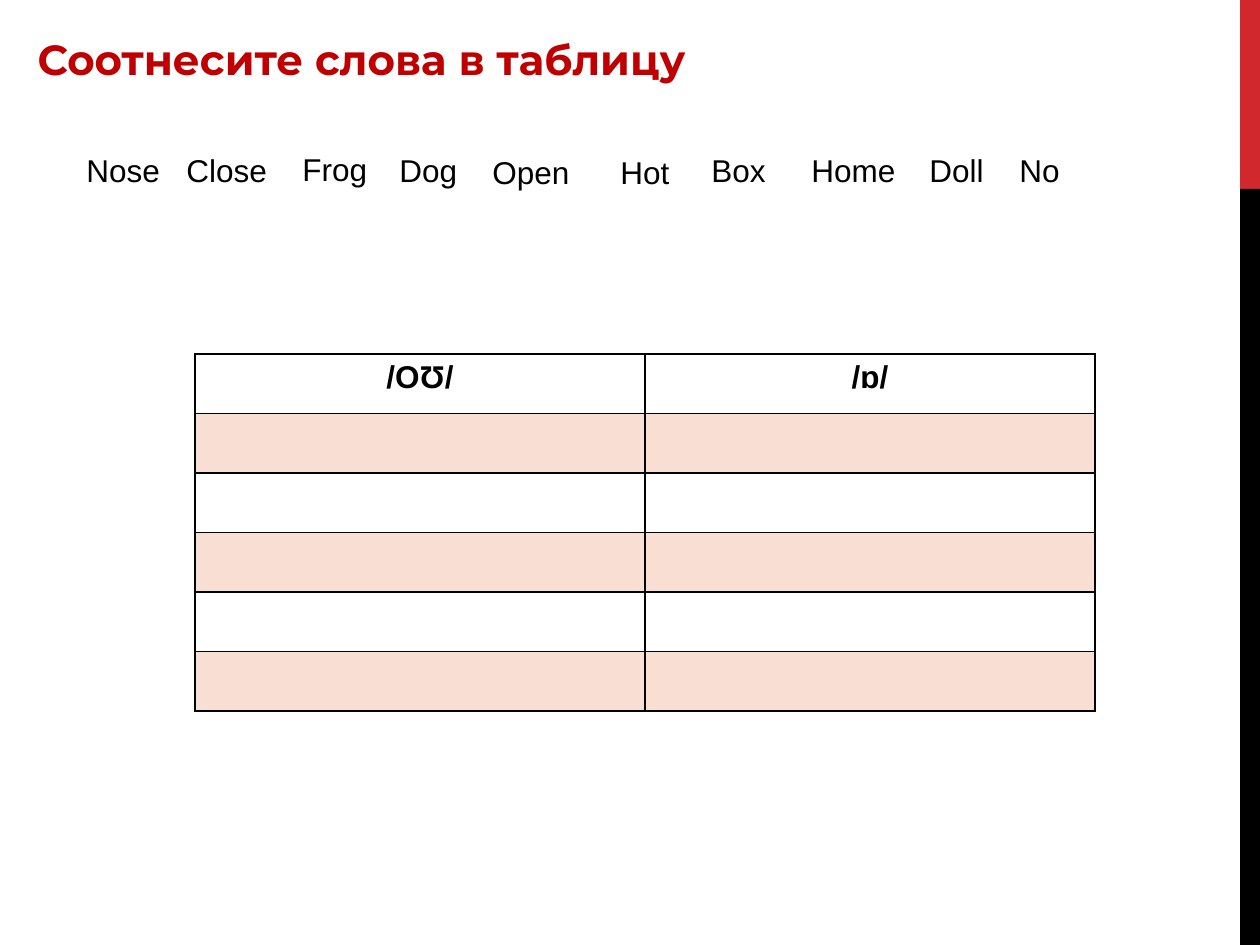
from dataclasses import dataclass

from lxml.etree import SubElement
from pptx import Presentation
from pptx.dml.color import RGBColor
from pptx.enum.shapes import MSO_SHAPE
from pptx.enum.text import MSO_ANCHOR, MSO_AUTO_SIZE, PP_ALIGN
from pptx.oxml.ns import qn
from pptx.slide import Slide
from pptx.table import _Cell
from pptx.util import Emu, Pt

PX_PER_INCH = 126


def px(length: int) -> Emu:
    return Emu(round(length * 914400 / PX_PER_INCH))


@dataclass(frozen=True)
class Theme:
    heading: str = "C00000"
    ink: str = "000000"
    accent: str = "D1282E"
    band: str = "F8DED3"
    heading_font: str = "Montserrat"
    body_font: str = "Arial"
    heading_size: int = 24
    body_size: int = 18
    border_width: int = 1


@dataclass(frozen=True)
class Box:
    left: int
    top: int
    width: int
    height: int

    def emu(self) -> tuple[Emu, ...]:
        return px(self.left), px(self.top), px(self.width), px(self.height)


@dataclass(frozen=True)
class Word:
    text: str
    left: int
    width: int
    top: int = 145


@dataclass(frozen=True)
class Stripe:
    box: Box
    color: str


THEME = Theme()
SLIDE_WIDTH, SLIDE_HEIGHT = 1260, 945
WORD_HEIGHT = 50
HEADING = "Соотнесите слова в таблицу"
HEADING_BOX = Box(25, 27, 707, 64)
STRIPES = [
    Stripe(Box(1240, 0, 20, 189), THEME.accent),
    Stripe(Box(1240, 189, 20, 756), THEME.ink),
]
WORDS = [
    Word("Nose", 74, 100),
    Word("Close", 174, 118),
    Word("Frog", 290, 169, 144),
    Word("Dog", 387, 89),
    Word("Open", 480, 118, 147),
    Word("Hot", 608, 118, 147),
    Word("Box", 699, 100),
    Word("Home", 799, 118),
    Word("Doll", 917, 110),
    Word("No", 1007, 159),
]
SOUNDS = ["/OƱ/", "/ɒ/"]
ANSWER_ROWS = 5
TABLE_BOX = Box(195, 354, 900, 357)


def format_runs(frame, font: str, size: int, color: str, bold: bool = False) -> None:
    for paragraph in frame.paragraphs:
        for run in paragraph.runs:
            run.font.name = font
            run.font.size = Pt(size)
            run.font.bold = bold
            run.font.color.rgb = RGBColor.from_string(color)


def draw_stripe(slide: Slide, stripe: Stripe) -> None:
    bar = slide.shapes.add_shape(MSO_SHAPE.RECTANGLE, *stripe.box.emu())
    bar.shadow.inherit = False
    bar.fill.solid()
    bar.fill.fore_color.rgb = RGBColor.from_string(stripe.color)
    bar.line.fill.background()


def draw_heading(slide: Slide) -> None:
    heading = slide.shapes.title
    heading.left, heading.top, heading.width, heading.height = HEADING_BOX.emu()
    frame = heading.text_frame
    frame.text = HEADING
    frame.word_wrap = False
    frame.auto_size = MSO_AUTO_SIZE.SHAPE_TO_FIT_TEXT
    frame.vertical_anchor = MSO_ANCHOR.TOP
    frame.paragraphs[0].alignment = PP_ALIGN.LEFT
    format_runs(frame, THEME.heading_font, THEME.heading_size, THEME.heading, True)


def draw_word(slide: Slide, word: Word) -> None:
    box = Box(word.left, word.top, word.width, WORD_HEIGHT)
    frame = slide.shapes.add_textbox(*box.emu()).text_frame
    frame.text = word.text
    frame.word_wrap = True
    frame.auto_size = MSO_AUTO_SIZE.SHAPE_TO_FIT_TEXT
    format_runs(frame, THEME.body_font, THEME.body_size, THEME.ink)


def set_borders(cell: _Cell) -> None:
    properties = cell._tc.get_or_add_tcPr()
    for side in ("a:lnL", "a:lnR", "a:lnT", "a:lnB"):
        border = SubElement(properties, qn(side), w=str(Pt(THEME.border_width)))
        SubElement(SubElement(border, qn("a:solidFill")), qn("a:srgbClr"), val=THEME.ink)


def draw_sound_table(slide: Slide) -> None:
    table = slide.shapes.add_table(ANSWER_ROWS + 1, len(SOUNDS), *TABLE_BOX.emu()).table
    table.first_row = False
    table.horz_banding = False
    for index, row in enumerate(table.rows):
        for cell in row.cells:
            set_borders(cell)
            if index % 2:
                cell.fill.solid()
                cell.fill.fore_color.rgb = RGBColor.from_string(THEME.band)
            else:
                cell.fill.background()
    for column, sound in enumerate(SOUNDS):
        frame = table.cell(0, column).text_frame
        frame.text = sound
        frame.paragraphs[0].alignment = PP_ALIGN.CENTER
        format_runs(frame, THEME.body_font, THEME.body_size, THEME.ink, True)


def main() -> None:
    presentation = Presentation()
    presentation.slide_width = px(SLIDE_WIDTH)
    presentation.slide_height = px(SLIDE_HEIGHT)
    slide = presentation.slides.add_slide(presentation.slide_layouts.get_by_name("Title Only"))
    for stripe in STRIPES:
        draw_stripe(slide, stripe)
    draw_heading(slide)
    for word in WORDS:
        draw_word(slide, word)
    draw_sound_table(slide)
    presentation.save("out.pptx")


if __name__ == "__main__":
    main()
